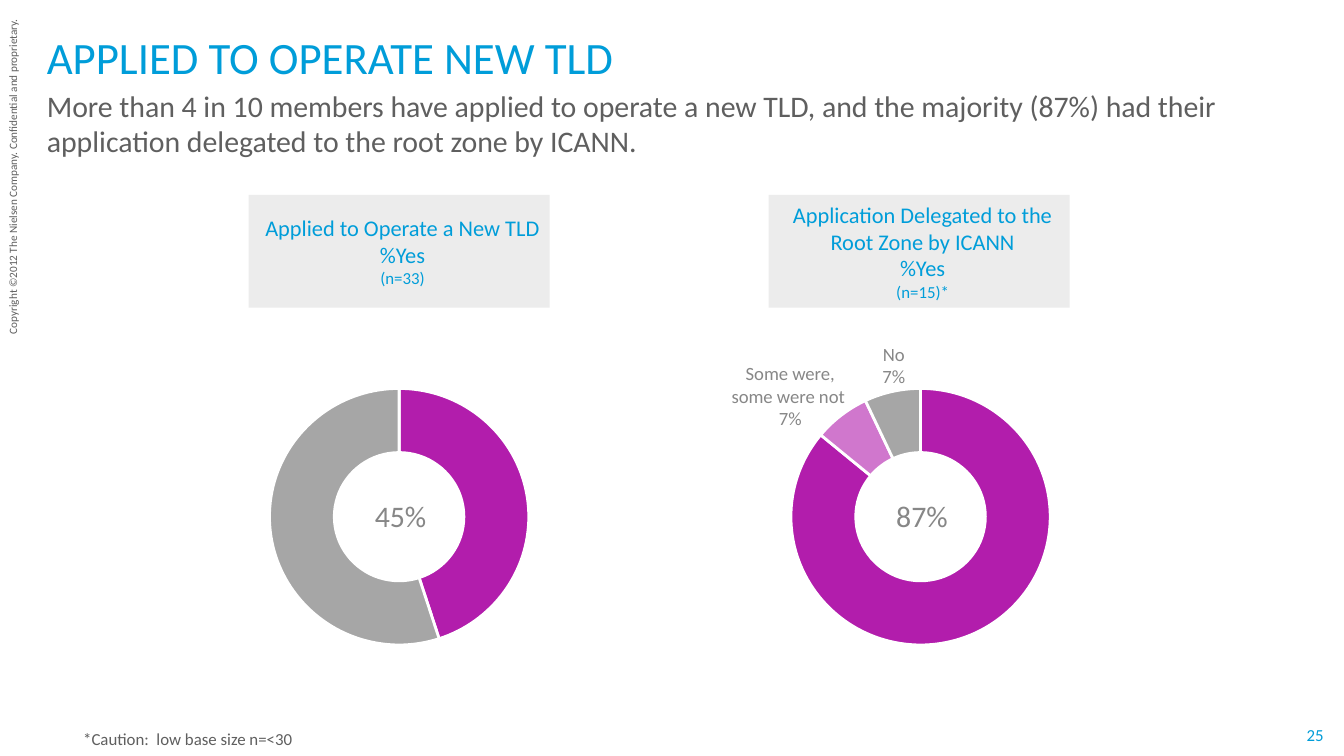
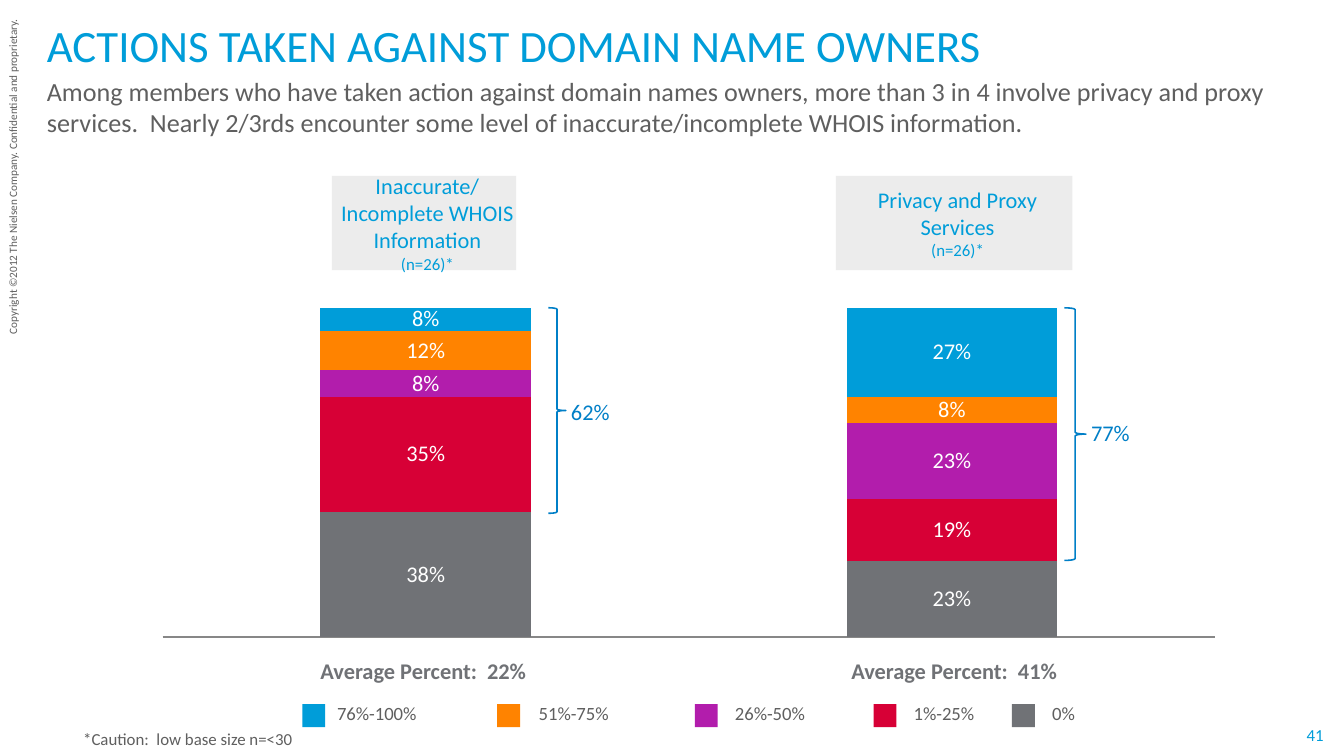
"""Builds two survey slides: doughnuts on new TLDs and stacked bars on actions."""
from dataclasses import dataclass

from pptx import Presentation
from pptx import util as u
from pptx.chart import data
from pptx.dml.color import RGBColor
from pptx.enum import chart as ce, shapes, text
from pptx.oxml import parse_xml
from pptx.oxml.ns import nsdecls, qn


@dataclass(frozen=True)
class Theme:
    font: str = "Calibri"
    blue: str = "009DD9"
    brace: str = "007FC7"
    body: str = "5F5F5F"
    soft: str = "878787"
    slate: str = "707276"
    red: str = "D70036"
    plum: str = "B21DAC"
    amber: str = "FF8300"
    ash: str = "A6A6A6"
    panel: str = "ECECEC"
    white: str = "FFFFFF"
    title: int = 24
    lead: int = 16
    dense: int = 14
    head: int = 12
    label: int = 10
    small: int = 9
    tiny: int = 6


T = Theme()
hue = RGBColor.from_string
Inch = u.Inches


def put(page, at, lines, color, fill=None, mid=False, ins=None,
        align=None, anchor=None, bold=None):
    at = [Inch(n) for n in at]
    if fill:
        box = page.shapes.add_shape(shapes.MSO_SHAPE.RECTANGLE, *at)
        box.shadow.inherit = False
        box.fill.solid()
        box.fill.fore_color.rgb = hue(fill)
        box.line.fill.background()
    else:
        box = page.shapes.add_textbox(*at)
    frame = box.text_frame
    frame.word_wrap = True
    if mid:
        ins, align, anchor = (0, 0), text.PP_ALIGN.CENTER, text.MSO_ANCHOR.MIDDLE
    if ins:
        frame.margin_left = frame.margin_right = Inch(ins[0])
        frame.margin_top = frame.margin_bottom = Inch(ins[1])
    if anchor is not None:
        frame.vertical_anchor = anchor
    frame.text = "\n".join(line for line, size in lines)
    for para, (line, size) in zip(frame.paragraphs, lines):
        para.alignment = align
        if mid:
            props = para._p.get_or_add_pPr()
            props.set("marL", str(Inch(0.05)))
            props.set("indent", "0")
        for run in para.runs:
            run.font.name = T.font
            run.font.size = u.Pt(size)
            run.font.bold = bold
            run.font.color.rgb = hue(color)
    return box


def draw(page, kind, at, cats, rows, area):
    feed = data.CategoryChartData()
    feed.categories = cats
    for num, vals in enumerate(rows, 1):
        feed.add_series(f"Series {num}", vals)
    chart = page.shapes.add_chart(kind, *[Inch(n) for n in at], feed).chart
    chart.has_title = chart.has_legend = False
    chart.font.name = T.font
    chart.font.size = u.Pt(T.label)
    chart.font.color.rgb = hue(T.body)
    plot = chart._chartSpace.chart.plotArea
    for old in plot.findall(qn("c:layout")):
        plot.remove(old)
    spots = "".join(f'<c:{k} val="{v / side}"/>'
                    for k, v, side in zip("xywh", area, at[2:] * 2))
    plot.insert(0, parse_xml(
        f'<c:layout {nsdecls("c")}><c:manualLayout><c:layoutTarget val="inner"/>'
        f'<c:xMode val="edge"/><c:yMode val="edge"/>{spots}'
        '</c:manualLayout></c:layout>'))
    return chart


deck = Presentation()
deck.slide_width, deck.slide_height = Inch(10), Inch(10) * 9 // 16

intros = [
    ("25", 0.15, 8.93, T.lead, "APPLIED TO OPERATE NEW TLD",
     "More than 4 in 10 members have applied to operate a new TLD, and the "
     "majority (87%) had their application delegated to the root zone by ICANN."),
    ("41", 0.06, 9.5, T.dense, "ACTIONS TAKEN AGAINST DOMAIN NAME OWNERS",
     "Among members who have taken action against domain names owners, more than "
     "3 in 4 involve privacy and proxy services.  Nearly 2/3rds encounter some "
     "level of inaccurate/incomplete WHOIS information."),
]
pages = []
for num, top, wide, size, title, lead in intros:
    page = deck.slides.add_slide(deck.slide_layouts[6])
    pages.append(page)
    mark = put(page, (-1.2, 1.19, 2.59, 0.2), [(
        "Copyright ©2012 The Nielsen Company. Confidential and proprietary.",
        T.tiny)], T.body)
    mark.rotation = 270
    mark.text_frame.word_wrap = False
    put(page, (9.71, 5.39, 0.15, 0.15), [(num, T.small)], T.blue, ins=(0, 0),
        align=text.PP_ALIGN.CENTER, anchor=text.MSO_ANCHOR.MIDDLE)
    put(page, (0.25, top, wide, 0.47), [(title, T.title)], T.blue,
        ins=(0.1, 0), anchor=text.MSO_ANCHOR.BOTTOM)
    put(page, (0.25, top + 0.5, 9.75, 0.43), [(lead, size)], T.body, ins=(0.1, 0))
    put(page, (0.52, 5.37, 1.98, 0.25),
        [("*Caution:  low base size n=<30", T.small)], T.body)

rings, bars = pages

donuts = [
    (1.85, 1.58, "Applied to Operate a New TLD", "(n=33)", "45%",
     (45, 55), (T.plum, T.ash)),
    (5.72, 5.46, "Application Delegated to the Root Zone by ICANN", "(n=15)*", "87%",
     (86, 7, 7), (T.plum, T.plum, T.ash)),
]
for left, side, head, base, share, vals, tones in donuts:
    put(rings, (left, 1.45, 2.24, 0.84),
        [(head, T.head), ("%Yes", T.head), (base, T.small)],
        T.blue, fill=T.panel, mid=True)
    cats = [str(n + 1) for n in range(len(vals))]
    chart = draw(rings, ce.XL_CHART_TYPE.DOUGHNUT, (side, 2.88, 2.83, 1.93),
                 cats, [vals], (0.42, 0, 1.94, 1.93))
    ring = chart.plots[0]
    ring._element.find(qn("c:holeSize")).set("val", "55")
    for num, tone in enumerate(tones):
        part = ring.series[0].points[num].format
        part.fill.solid()
        part.fill.fore_color.rgb = hue(tone)
        part.line.color.rgb = hue(T.white)
        part.line.width = u.Pt(1.5)
        if num == 1 and tone == T.plum:
            solid = part.fill._xPr.find(qn("a:solidFill"))
            solid[0].append(parse_xml(f'<a:alpha {nsdecls("a")} val="60000"/>'))
    put(rings, (side + 1, 3.51, 0.75, 0.65), [(share, T.lead)], T.soft, mid=True)

for at, name in [((5.37, 2.62, 0.97, 0.65), "Some were, some were not "),
                 ((6.25, 2.39, 0.75, 0.65), "No")]:
    put(rings, at, [(name, T.label), ("7%", T.label)], T.soft, mid=True)

levels = [
    ("0%", T.slate, (0.38, 0.23), 7.53, 7.73),
    ("1%-25%", T.red, (0.35, 0.19), 6.5, 6.7),
    ("26%-50%", T.plum, (0.08, 0.23), 5.17, 5.37),
    ("51%-75%", T.amber, (0.12, 0.08), 3.7, 3.91),
    ("76%-100%", T.blue, (0.08, 0.27), 2.25, 2.41),
]
chart = draw(bars, ce.XL_CHART_TYPE.COLUMN_STACKED, (-0.08, 2.16, 9.44, 3.51),
             ["1", "2"], [lev[2] for lev in levels], (1.29, 0.13, 7.83, 2.45))
stack = chart.plots[0]
stack.gap_width, stack.overlap = 150, 100
stack.vary_by_categories = False
scale, base = chart.value_axis, chart.category_axis
scale.minimum_scale, scale.maximum_scale = 0, 1
scale.has_major_gridlines = scale.visible = False
scale.tick_labels.number_format = "0%"
scale.tick_labels.number_format_is_linked = False
base.tick_label_position = ce.XL_TICK_LABEL_POSITION.NONE
base.major_tick_mark = base.minor_tick_mark = ce.XL_TICK_MARK.NONE
base.tick_labels.font.name = T.font
base.tick_labels.font.size = u.Pt(T.label)
base.tick_labels.font.color.rgb = hue(T.blue)
base.format.line.color.rgb = hue(T.soft)
base.format.line.width = u.Pt(0.75)

for row, (name, tone, vals, left, side) in zip(stack.series, levels):
    row.format.fill.solid()
    row.format.fill.fore_color.rgb = hue(tone)
    tags = row.data_labels
    tags.show_value = True
    tags.number_format = "0%"
    tags.number_format_is_linked = False
    tags.font.name = T.font
    tags.font.size = u.Pt(T.head)
    tags.font.color.rgb = hue(T.white)
    put(bars, (left, 5.24, 0.17, 0.17), [], T.body, fill=tone)
    put(bars, (side, 5.17, 2.06, 0.27), [(name, T.label)], T.body)

groups = [
    ((2.47, 1.31, 1.37, 0.7), "Inaccurate/ Incomplete WHOIS Information",
     2.09, "22%", (4.08, 2.29, 0.13, 1.53), (4.15, 2.91), "62%"),
    ((6.22, 1.31, 1.76, 0.7), "Privacy and Proxy Services",
     6.04, "41%", (7.92, 2.29, 0.16, 1.88), (8.02, 3.07), "77%"),
]
for at, head, left, mean, span, spot, share in groups:
    put(bars, at, [(head, T.head), ("(n=26)*", T.small)],
        T.blue, fill=T.panel, mid=True)
    put(bars, (left, 4.84, 2.12, 0.3), [(f"Average Percent:  {mean}", T.head)],
        T.slate, align=text.PP_ALIGN.CENTER, bold=True)
    brace = bars.shapes.add_shape(shapes.MSO_SHAPE.RIGHT_BRACE,
                                  *[Inch(n) for n in span])
    brace.shadow.inherit = False
    brace.fill.background()
    brace.line.color.rgb = hue(T.brace)
    brace.line.width = u.Pt(0.85)
    put(bars, (*spot, 0.67, 0.3), [(share, T.head)], T.brace)

deck.save("out.pptx")
